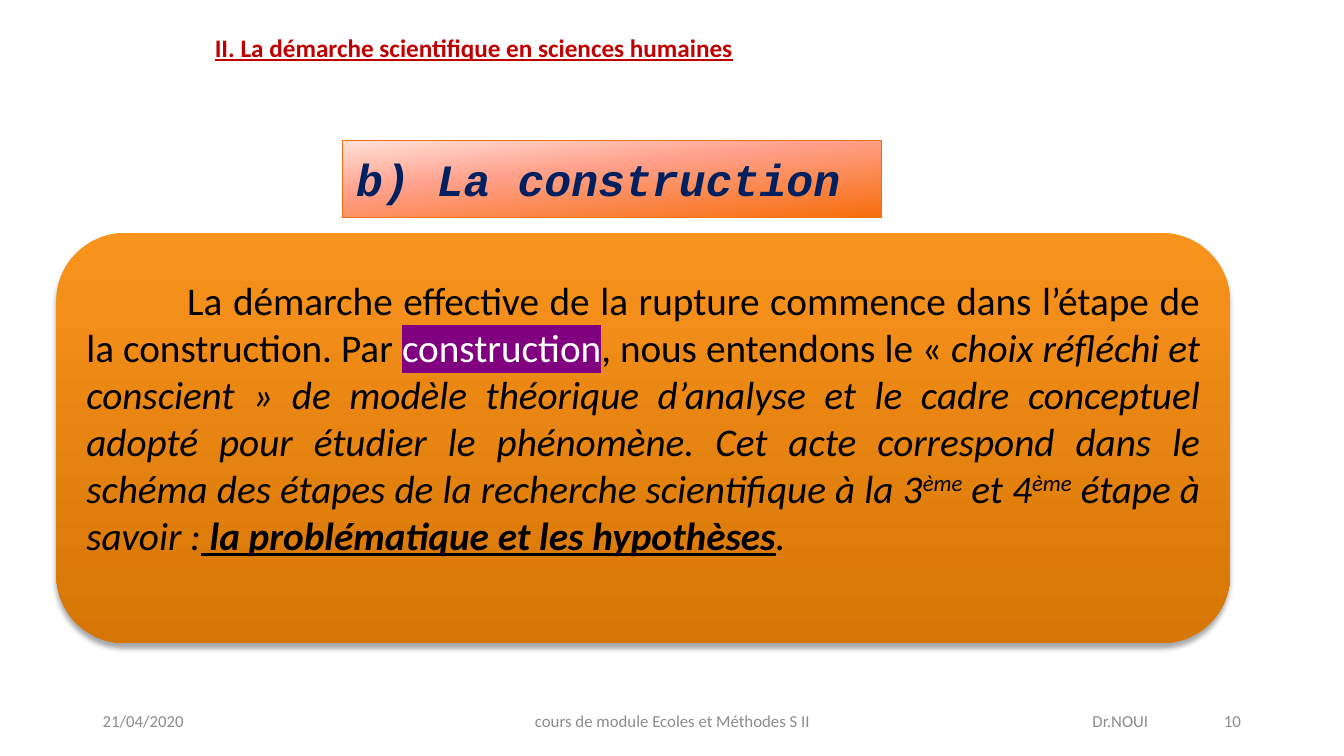
from lxml import etree
from pptx import Presentation
from pptx import util as u
from pptx.dml.color import RGBColor
from pptx.enum import shapes, text
from pptx.oxml.ns import qn

COLORS = {
    "red": "C00000", "grey": "8C8C8C", "navy": "002060", "black": "000000",
    "white": "FFFFFF", "purple": "800080", "border": "EC7016",
}
HEADING_STOPS = [(0, "FFE1DA"), (40, "FFA08A"), (100, "F76E0B")]
PANEL_STOPS = [(0, "F8931D"), (100, "D67606")]
ALIGN = text.PP_ALIGN
ANCHOR = text.MSO_ANCHOR


def add_color(parent, tag, color, alpha=None):
    """Add an element that holds an RGB colour and return it."""
    element = etree.SubElement(parent, qn(tag))
    value = etree.SubElement(element, qn("a:srgbClr"), val=color)
    if alpha is not None:
        etree.SubElement(value, qn("a:alpha"), val=str(alpha * 1000))
    return element


def add_text(paragraph, content, size, color="black", font="Calibri", bold=False,
             italic=False, underline=False, baseline=0, highlight=None):
    """Add a formatted run to a paragraph."""
    run = paragraph.add_run()
    run.text = content
    run.font.size = u.Pt(size)
    run.font.name = font
    run.font.bold = bold
    run.font.italic = italic
    run.font.underline = underline
    run.font.color.rgb = RGBColor.from_string(COLORS[color])
    properties = run.font._element
    if baseline:
        properties.set("baseline", str(baseline * 1000))
    if highlight:
        mark = add_color(properties, "a:highlight", COLORS[highlight])
        properties.find(qn("a:solidFill")).addnext(mark)


def set_frame(shape, align, anchor=ANCHOR.MIDDLE, wrap=True):
    """Set the layout of a text frame and return its first paragraph."""
    frame = shape.text_frame
    frame.word_wrap = wrap
    frame.vertical_anchor = anchor
    paragraph = frame.paragraphs[0]
    paragraph.alignment = align
    return paragraph


def set_gradient(shape, stops, angle):
    """Fill a shape with a linear gradient, its angle measured clockwise."""
    shape.fill.gradient()
    shape.fill.gradient_angle = 360 - angle
    stop_list = shape._element.spPr.find(qn("a:gradFill")).find(qn("a:gsLst"))
    for old_stop in list(stop_list):
        stop_list.remove(old_stop)
    for position, color in stops:
        add_color(stop_list, "a:gs", color).set("pos", str(position * 1000))


def add_panel(slide, kind, left, top, width, height, stops, angle):
    """Add a gradient shape without line or shadow."""
    shape = slide.shapes.add_shape(kind, *map(u.Inches, (left, top, width, height)))
    set_gradient(shape, stops, angle)
    shape.line.fill.background()
    shape.shadow.inherit = False
    return shape


def add_shadow(shape):
    """Add a soft shadow below a shape."""
    effects = shape._element.spPr.find(qn("a:effectLst"))
    shadow = add_color(effects, "a:outerShdw", COLORS["black"], alpha=34)
    settings = {"blurRad": u.Pt(3.5), "dist": u.Pt(4), "dir": 90 * 60000, "rotWithShape": 0}
    for name, value in settings.items():
        shadow.set(name, str(int(value)))


def add_title(slide):
    """Place and format the section title."""
    title = slide.shapes.title
    title.left, title.top, title.width, title.height = map(u.Inches, (2.03, 0.27, 5.38, 0.4))
    paragraph = set_frame(title, ALIGN.LEFT, ANCHOR.TOP, wrap=False)
    title.text_frame.auto_size = text.MSO_AUTO_SIZE.SHAPE_TO_FIT_TEXT
    add_text(paragraph, "II. La démarche scientifique en sciences humaines", 18,
             color="red", bold=True, underline=True)


def add_heading(slide):
    """Add the heading of the step."""
    heading = add_panel(slide, shapes.MSO_SHAPE.RECTANGLE, 3.4, 1.39, 5.34, 0.77,
                        HEADING_STOPS, 84)
    heading.line.color.rgb = RGBColor.from_string(COLORS["border"])
    heading.line.width = u.Pt(0.75)
    add_text(set_frame(heading, ALIGN.CENTER), "b) La construction ", 32, color="navy",
             font="Courier New", bold=True, italic=True)


def add_definition(slide):
    """Add the rounded panel that defines the construction step."""
    panel = add_panel(slide, shapes.MSO_SHAPE.ROUNDED_RECTANGLE, 0.56, 2.31, 11.64, 4.07,
                      PANEL_STOPS, 90)
    add_shadow(panel)
    panel.text_frame.margin_bottom = u.Inches(0.46)
    paragraph = set_frame(panel, ALIGN.JUSTIFY)
    paragraph._p.get_or_add_pPr().set("indent", str(u.Inches(1)))
    runs = [
        ("La démarche effective de la rupture commence dans l’étape de la construction. Par ", {}),
        ("construction", {"color": "white", "highlight": "purple"}),
        (", nous entendons le « ", {}),
        ("choix réfléchi et conscient » de modèle théorique d’analyse et le cadre conceptuel "
         "adopté pour étudier le phénomène. Cet acte correspond dans le schéma des étapes de "
         "la recherche scientifique à la 3", {"italic": True}),
        ("ème", {"italic": True, "baseline": 30}),
        (" et 4", {"italic": True}),
        ("ème", {"italic": True, "baseline": 30}),
        (" étape à savoir :", {"italic": True}),
        (" la problématique et les hypothèses",
         {"italic": True, "bold": True, "underline": True}),
        (".", {"italic": True}),
    ]
    for content, style in runs:
        add_text(paragraph, content, 28, **style)


def add_footer(slide, left, width, content, align, tabs=()):
    """Add a footer text with optional right tab stops in inches."""
    box = slide.shapes.add_textbox(*map(u.Inches, (left, 6.95, width, 0.4)))
    paragraph = set_frame(box, align)
    if tabs:
        tab_list = etree.SubElement(paragraph._p.get_or_add_pPr(), qn("a:tabLst"))
        for tab in tabs:
            etree.SubElement(tab_list, qn("a:tab"), pos=str(u.Inches(tab)), algn="r")
    add_text(paragraph, content, 12, color="grey")


def main():
    """Build and save the slide."""
    presentation = Presentation()
    presentation.slide_width = u.Inches(13.33)
    presentation.slide_height = u.Inches(7.5)
    slide = presentation.slides.add_slide(presentation.slide_layouts[5])
    add_title(slide)
    add_footer(slide, 0.92, 3, "21/04/2020", ALIGN.LEFT)
    add_footer(slide, 4.42, 4.5, "cours de module Ecoles et Méthodes S II", ALIGN.CENTER)
    add_footer(slide, 9.42, 3, "\tDr.NOUI\t10", ALIGN.LEFT, tabs=(1.87, 2.79))
    add_heading(slide)
    add_definition(slide)
    presentation.save("out.pptx")


if __name__ == "__main__":
    main()
